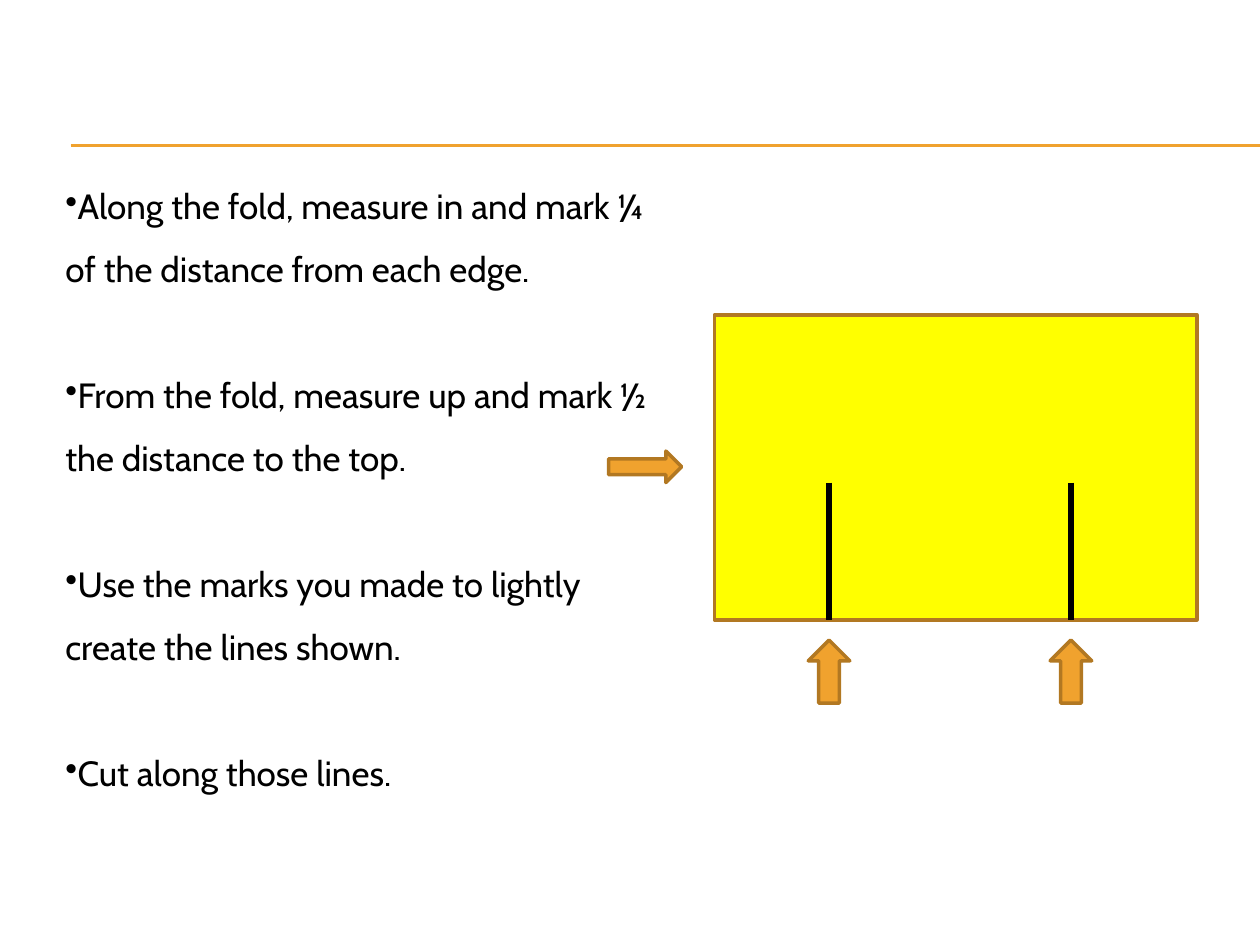
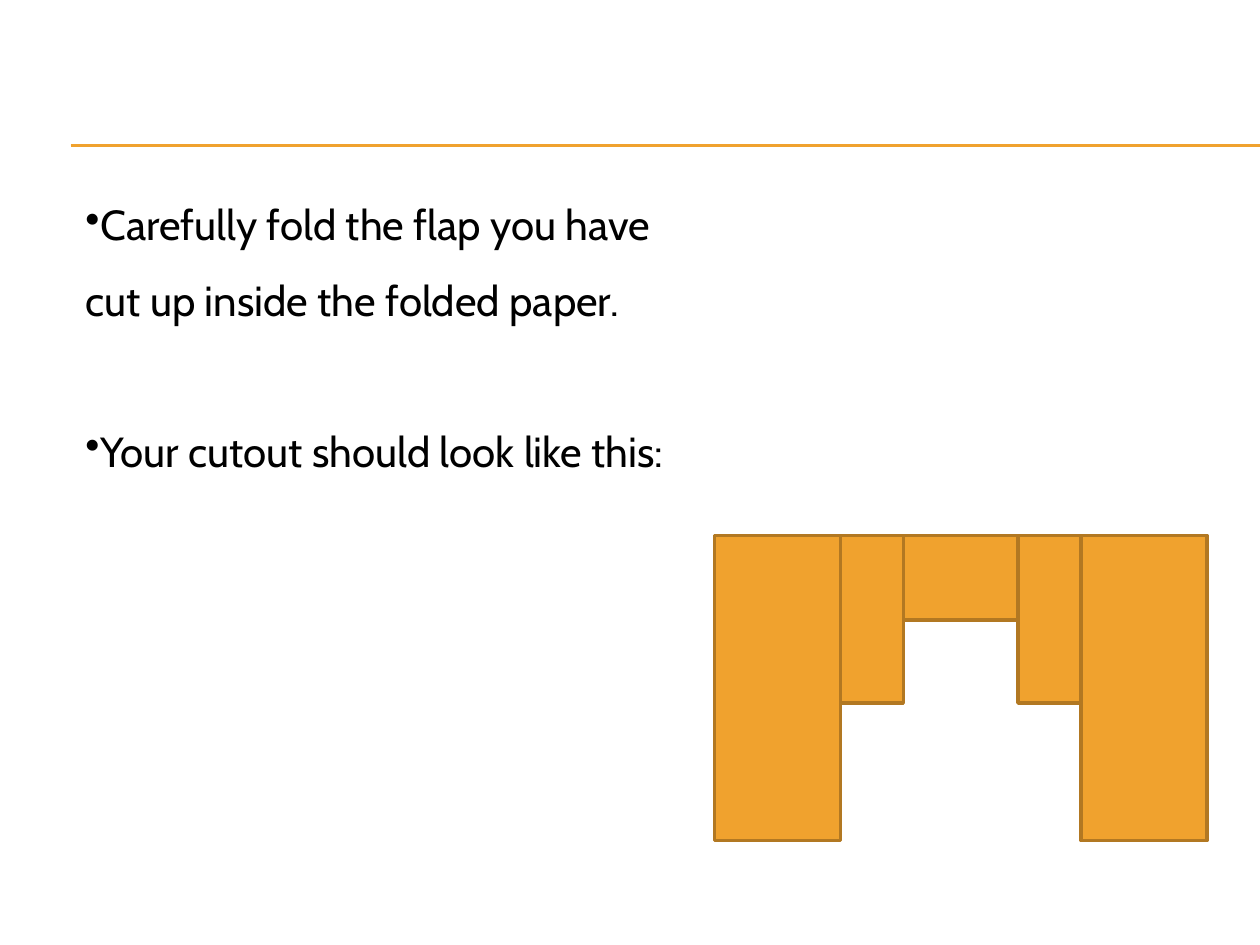
from pptx import Presentation
from pptx.dml.color import RGBColor
from pptx.enum.shapes import MSO_CONNECTOR, MSO_SHAPE
from pptx.enum.text import MSO_AUTO_SIZE
from pptx.oxml.ns import qn
from pptx.util import Inches, Pt

RECTANGLE = MSO_SHAPE.RECTANGLE
UP_ARROW = MSO_SHAPE.UP_ARROW
RIGHT_ARROW = MSO_SHAPE.RIGHT_ARROW
STRAIGHT = MSO_CONNECTOR.STRAIGHT
GROW = MSO_AUTO_SIZE.SHAPE_TO_FIT_TEXT

COLORS = {"accent": "F0A22E", "outline": "B27822", "paper": "FFFF00",
          "ink": "000000", "background": "FFFFFF"}
FONT = "Cabin"
LINE_SPACING = 1.5
LINE_PITCH = 1.8  # height of one spaced line, relative to the text size


def color(name):
    return RGBColor.from_string(COLORS[name])


def apply(target, values):
    for name, value in values.items():
        setattr(target, name, value)


class Deck:
    def __init__(self):
        self.presentation = Presentation()
        apply(self.presentation, {"slide_width": Inches(10), "slide_height": Inches(7.5)})
        self.slide = None

    def add_slide(self):
        """Start a blank slide with the shared double rule under the title area."""
        self.slide = self.presentation.slides.add_slide(self.presentation.slide_layouts[6])
        background = self.slide.background.fill
        background.solid()
        background.fore_color.rgb = color("background")
        for y in (1.15, 1.16):
            self.line(0.56, y, 10, y, "accent", 0.75)

    def line(self, x1, y1, x2, y2, color_name, width):
        connector = self.slide.shapes.add_connector(
            STRAIGHT, Inches(x1), Inches(y1), Inches(x2), Inches(y2))
        connector.line.color.rgb = color(color_name)
        connector.line.width = Pt(width)
        properties = connector._element.spPr
        properties.append(properties.makeelement(qn("a:effectLst"), {}))

    def shape(self, kind, left, top, width, height, fill="accent"):
        shape = self.slide.shapes.add_shape(
            kind, Inches(left), Inches(top), Inches(width), Inches(height))
        shape.shadow.inherit = False
        shape.fill.solid()
        shape.fill.fore_color.rgb = color(fill)
        shape.line.color.rgb = color("outline")
        shape.line.width = Pt(2)

    def bullets(self, left, top, width, height, size, items):
        """Add bulleted steps, set one text line apart."""
        box = self.slide.shapes.add_textbox(
            Inches(left), Inches(top), Inches(width), Inches(height))
        frame = box.text_frame
        apply(frame, {"word_wrap": True, "auto_size": GROW})
        for index, item in enumerate(items):
            paragraph = frame.add_paragraph() if index else frame.paragraphs[0]
            properties = paragraph._p.get_or_add_pPr()
            properties.append(properties.makeelement(qn("a:buChar"), {"char": "•"}))
            apply(paragraph, {"text": item, "line_spacing": LINE_SPACING,
                              "space_before": Pt(size * LINE_PITCH if index else 0)})
            apply(paragraph.font, {"name": FONT, "size": Pt(size)})
            paragraph.font.color.rgb = color("ink")


def add_cutting_slide(deck):
    deck.add_slide()
    deck.bullets(0.42, 1.25, 5, 5.6, 20, [
        "Along the fold, measure in and mark ¼ of the distance from each edge.",
        "From the fold, measure up and mark ½ the distance to the top.",
        "Use the marks you made to lightly create the lines shown.",
        "Cut along those lines.",
    ])
    deck.shape(RECTANGLE, 5.67, 2.5, 3.83, 2.42, "paper")
    deck.shape(RIGHT_ARROW, 4.83, 3.58, 0.58, 0.25)
    arrow_width = 0.33
    for cut_x in (6.58, 8.5):
        deck.shape(UP_ARROW, cut_x - arrow_width / 2, 5.08, arrow_width, 0.5)
        deck.line(cut_x, 3.83, cut_x, 4.92, "ink", 3)


def add_cutout_slide(deck):
    deck.add_slide()
    deck.bullets(0.58, 1.33, 5, 2.52, 24, [
        "Carefully fold the flap you have cut up inside the folded paper.",
        "Your cutout should look like this:",
    ])
    side, fold, middle = (1, 2.42), (0.5, 1.33), (0.91, 0.67)
    left = 5.67
    for width, height in (side, fold, middle, fold, side):
        deck.shape(RECTANGLE, left, 4.25, width, height)
        left += width


def main():
    deck = Deck()
    add_cutting_slide(deck)
    add_cutout_slide(deck)
    deck.presentation.save("out.pptx")


if __name__ == "__main__":
    main()
